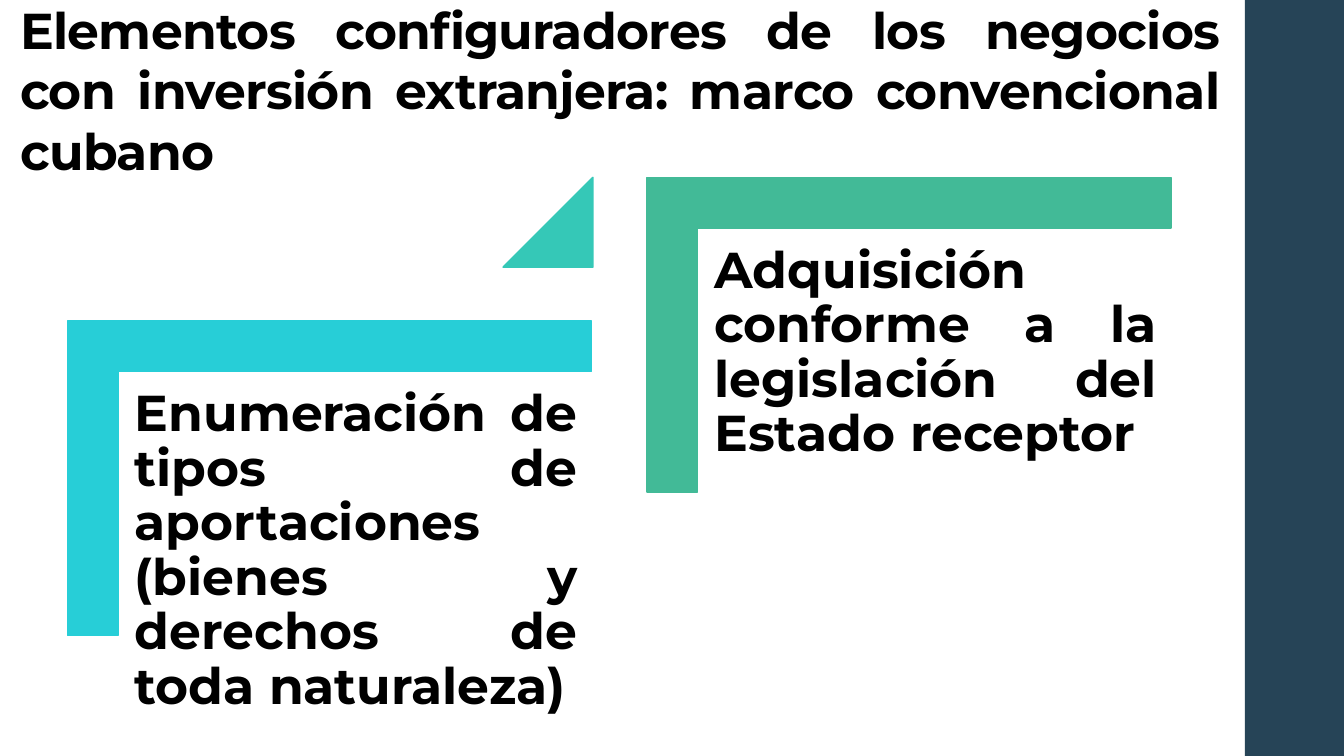
"""Build a slide with two ascending steps on Cuban foreign investment agreements."""
import pptx
import pptx.util
import pptx.dml.color
import pptx.enum.shapes
import pptx.enum.text

Pt = pptx.util.Pt
SHAPES = pptx.enum.shapes.MSO_SHAPE
ANCHORS = pptx.enum.text.MSO_ANCHOR

TITLE = "Elementos configuradores de los negocios con inversión extranjera: marco convencional cubano"
STEPS = [
    {"text": "Enumeración de tipos de aportaciones (bienes y derechos de toda naturaleza)",
     "left": 48.1, "top": 229.2, "color": "27CED7"},
    {"text": "Adquisición conforme a la legislación del Estado receptor",
     "left": 462.1, "top": 126.7, "color": "42BA97"},
]
SIDEBAR_COLOR = "264457"
TRIANGLE_COLOR = "35C8B7"
STEP_WIDTH, STEP_HEIGHT = 374.4, 224.6
BAR_RATIO = 0.161
TEXT_OFFSET = 37.4
TEXT_WIDTH, TEXT_HEIGHT = 337.7, 295.9
TRIANGLE_SIZE = 64.1


def rgb(color):
    return pptx.dml.color.RGBColor.from_string(color)


def write(frame, text, inset=None, anchor=ANCHORS.TOP, line_spacing=1.0, space_after=0, tracking=0):
    frame.word_wrap = True
    frame.auto_size = pptx.enum.text.MSO_AUTO_SIZE.NONE
    frame.vertical_anchor = anchor
    if inset is not None:
        frame.margin_left = frame.margin_right = Pt(inset)
        frame.margin_top = frame.margin_bottom = Pt(inset)
    para = frame.paragraphs[0]
    para.alignment = pptx.enum.text.PP_ALIGN.JUSTIFY
    para.line_spacing = line_spacing
    para.space_after = Pt(space_after)
    span = para.add_run()
    span.text = text
    span.font.name = "Montserrat"
    span.font.size = Pt(36)
    span.font.bold = True
    span.font.color.rgb = rgb("000000")
    if tracking:
        span.font._element.set("spc", str(round(tracking * 100)))


def add_filled(page, kind, left, top, width, height, color, outline=0):
    shape = page.shapes.add_shape(kind, Pt(left), Pt(top), Pt(width), Pt(height))
    shape.shadow.inherit = False
    shape.fill.solid()
    shape.fill.fore_color.rgb = rgb(color)
    if outline:
        shape.line.color.rgb = rgb(color)
        shape.line.width = Pt(outline)
    else:
        shape.line.fill.background()
    return shape


def add_step(page, text, left, top, color):
    corner_left = left + (STEP_WIDTH - STEP_HEIGHT) / 2
    corner_top = top - (STEP_WIDTH - STEP_HEIGHT) / 2
    corner = add_filled(page, SHAPES.CORNER, corner_left, corner_top,
                        STEP_HEIGHT, STEP_WIDTH, color, outline=1.1)
    corner.rotation = 90
    corner.adjustments[0] = corner.adjustments[1] = BAR_RATIO
    box = page.shapes.add_textbox(Pt(left + TEXT_OFFSET), Pt(top + TEXT_OFFSET),
                                  Pt(TEXT_WIDTH), Pt(TEXT_HEIGHT))
    write(box.text_frame, text, inset=10.8, line_spacing=0.9, space_after=12.6)


def main():
    deck = pptx.Presentation()
    deck.slide_width, deck.slide_height = Pt(960), Pt(540)
    page = deck.slides.add_slide(deck.slide_layouts[5])
    add_filled(page, SHAPES.RECTANGLE, 889.2, 0, 72, 540, SIDEBAR_COLOR)

    title = page.shapes.title
    title.left, title.top, title.width, title.height = Pt(7.2), Pt(0), Pt(871.2), Pt(132.5)
    write(title.text_frame, TITLE, anchor=ANCHORS.BOTTOM, tracking=-0.5)

    for step in STEPS:
        add_step(page, **step)

    triangle_left = STEPS[0]["left"] + STEP_WIDTH - TRIANGLE_SIZE + 1
    triangle = add_filled(page, SHAPES.ISOSCELES_TRIANGLE, triangle_left, STEPS[1]["top"],
                          TRIANGLE_SIZE, TRIANGLE_SIZE, TRIANGLE_COLOR, outline=1.1)
    triangle.adjustments[0] = 1
    deck.save("out.pptx")


if __name__ == "__main__":
    main()
